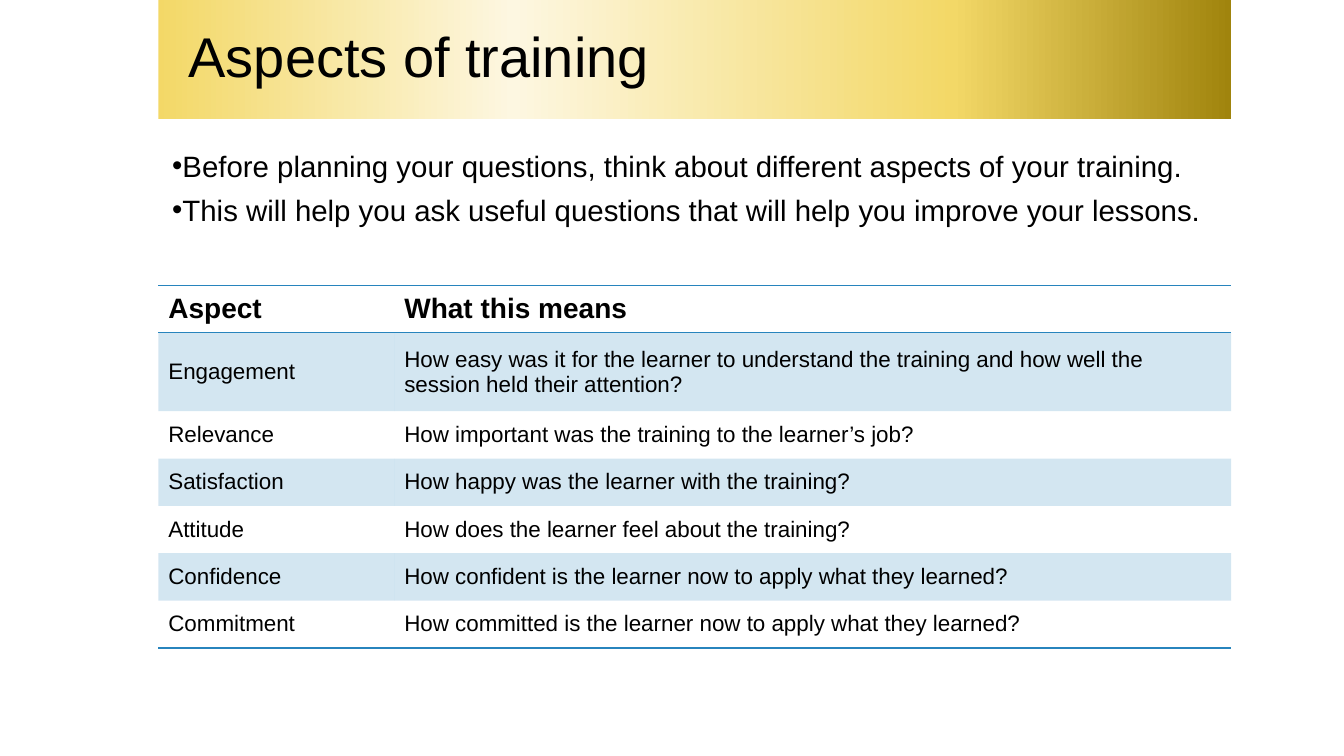
from dataclasses import dataclass

from lxml.etree import SubElement
from pptx import Presentation
from pptx.dml.color import RGBColor
from pptx.enum.text import MSO_ANCHOR as Anchor, MSO_AUTO_SIZE as AutoSize, PP_ALIGN as Align
from pptx.oxml.ns import qn
from pptx.util import Inches, Pt


@dataclass(frozen=True)
class Theme:
    font: str = "Arial"
    text: str = "000000"
    accent: str = "2784BD"
    band_alpha: int = 20
    gold: tuple = ((0, "F3D867"), (33, "FDF7E1"), (74, "F3D867"), (100, "A0840D"))
    title_size: int = 40
    body_size: int = 21
    header_size: int = 20
    cell_size: int = 16


@dataclass(frozen=True)
class Aspect:
    name: str
    meaning: str
    height: float = 0.47


THEME = Theme()
LEFT, WIDTH = 1.57, 10.64
TABLE_TOP = 2.83
COLUMNS = (2.34, 8.3)
NO_GRID_STYLE = "{2D5ABB26-0587-4C30-8999-92F81FD0307C}"
POINTS = (
    "Before planning your questions, think about different aspects of your training.",
    "This will help you ask useful questions that will help you improve your lessons.",
)
ASPECTS = (
    Aspect("Aspect", "What this means"),
    Aspect("Engagement", "How easy was it for the learner to understand the training "
           "and how well the session held their attention?", 0.78),
    Aspect("Relevance", "How important was the training to the learner’s job?"),
    Aspect("Satisfaction", "How happy was the learner with the training?"),
    Aspect("Attitude", "How does the learner feel about the training?"),
    Aspect("Confidence", "How confident is the learner now to apply what they learned?"),
    Aspect("Commitment", "How committed is the learner now to apply what they learned?"),
)


def write(p, text: str, size: int, bold: bool = False) -> None:
    r = p.add_run()
    r.text = text
    formats = {"name": THEME.font, "size": Pt(size), "bold": bold}
    for key, value in formats.items():
        setattr(r.font, key, value)
    r.font.color.rgb = RGBColor.from_string(THEME.text)


def set_indent(p, margin: float, first: float):
    pPr = p._p.get_or_add_pPr()
    pPr.set("marL", str(Inches(margin)))
    pPr.set("indent", str(Inches(first)))
    return pPr


def add_color(parent, color: str, alpha: int = 100) -> None:
    clr = SubElement(parent, qn("a:srgbClr"), val=color)
    if alpha < 100:
        SubElement(clr, qn("a:alpha"), val=str(alpha * 1000))


def add_title(slide, text: str) -> None:
    s = slide.shapes.title
    s.left, s.top, s.width, s.height = map(Inches, (LEFT, 0, WIDTH, 1.18))
    s.fill.gradient()
    s.fill.gradient_angle = 0
    stops = s._element.spPr.find(".//" + qn("a:gsLst"))
    for stop in list(stops):
        stops.remove(stop)
    for position, color in THEME.gold:
        add_color(SubElement(stops, qn("a:gs"), pos=str(position * 1000)), color)
    tf = s.text_frame
    tf.vertical_anchor = Anchor.MIDDLE
    tf.auto_size = AutoSize.NONE
    p = tf.paragraphs[0]
    set_indent(p, 0.2, 0)
    p.alignment = Align.LEFT
    p.line_spacing = 0.9
    write(p, text, THEME.title_size)


def add_points(slide, points: tuple[str, ...]) -> None:
    s = slide.shapes.add_textbox(*map(Inches, (1.61, 1.42, WIDTH, 4.92)))
    tf = s.text_frame
    tf.word_wrap = True
    for i, text in enumerate(points):
        p = tf.add_paragraph() if i else tf.paragraphs[0]
        pPr = set_indent(p, 0, -0.28)
        SubElement(pPr, qn("a:buFont"), typeface=THEME.font)
        SubElement(pPr, qn("a:buChar"), char="•")
        p.space_after = Pt(6)
        write(p, text, THEME.body_size)


def format_cell(cell, edges: tuple[str, ...], banded: bool) -> None:
    tcPr = cell._tc.get_or_add_tcPr()
    for edge in edges:
        line = SubElement(tcPr, qn(f"a:{edge}"), w=str(Pt(1)))
        add_color(SubElement(line, qn("a:solidFill")), THEME.accent)
    if banded:
        add_color(SubElement(tcPr, qn("a:solidFill")), THEME.accent, THEME.band_alpha)
    else:
        cell.fill.background()


def add_aspect_table(slide, aspects: tuple[Aspect, ...]) -> None:
    height = sum(a.height for a in aspects)
    frame = slide.shapes.add_table(len(aspects), len(COLUMNS),
                                   *map(Inches, (LEFT, TABLE_TOP, WIDTH, height)))
    table = frame.table
    table.horz_banding = False
    table._tbl.tblPr.find(qn("a:tableStyleId")).text = NO_GRID_STYLE
    for column, width in zip(table.columns, COLUMNS):
        column.width = Inches(width)
    last = len(aspects) - 1
    for i, aspect in enumerate(aspects):
        table.rows[i].height = Inches(aspect.height)
        header = i == 0
        edges = ("lnT", "lnB") if header else ("lnB",) if i == last else ()
        size = THEME.header_size if header else THEME.cell_size
        for j, text in enumerate((aspect.name, aspect.meaning)):
            cell = table.cell(i, j)
            cell.vertical_anchor = Anchor.MIDDLE
            format_cell(cell, edges, banded=i % 2 == 1)
            write(cell.text_frame.paragraphs[0], text, size, bold=header)


def main() -> None:
    prs = Presentation()
    prs.slide_width, prs.slide_height = Inches(13.33), Inches(7.5)
    slide = prs.slides.add_slide(prs.slide_layouts[5])
    add_title(slide, "Aspects of training")
    add_points(slide, POINTS)
    add_aspect_table(slide, ASPECTS)
    prs.save("out.pptx")


if __name__ == "__main__":
    main()
